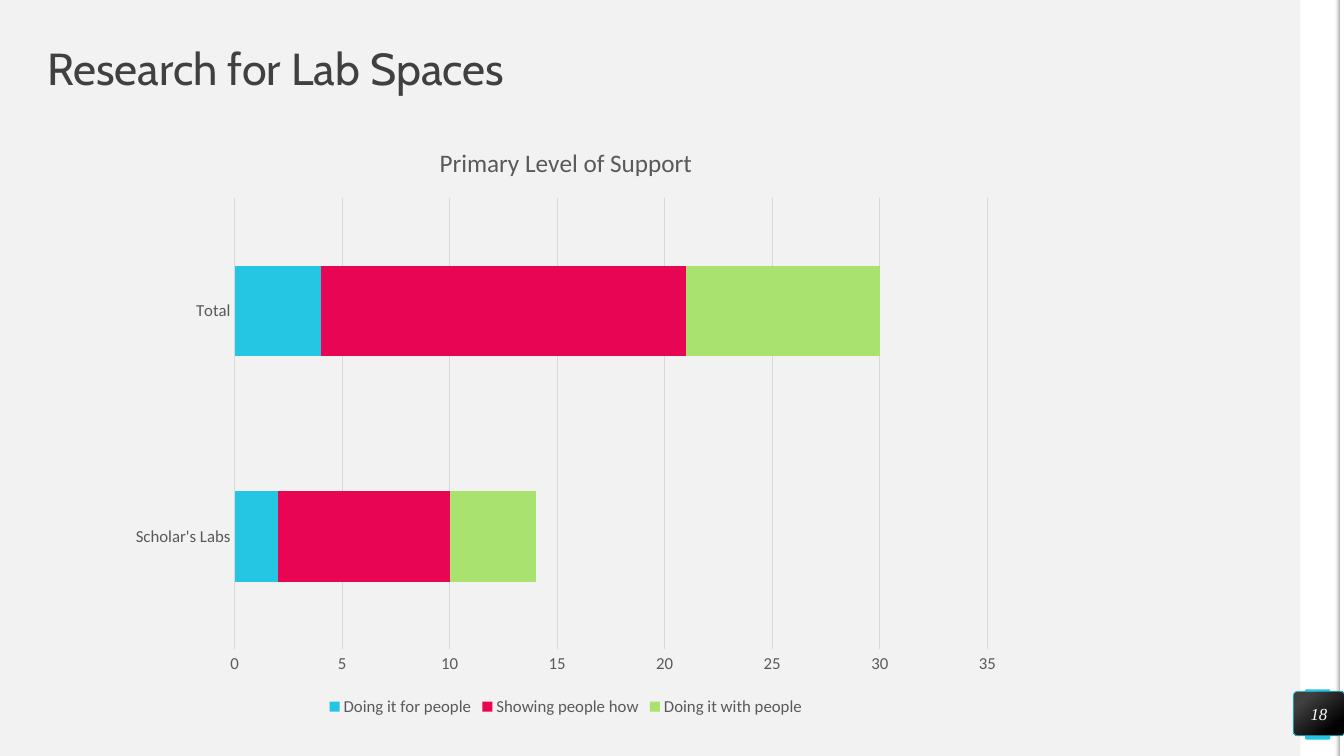
"""Build the slide on research for lab spaces with its stacked bar chart."""
from lxml import etree
from pptx import Presentation
from pptx import util as u
from pptx.chart.data import CategoryChartData
from pptx.dml.color import RGBColor
from pptx.enum import chart as ch, shapes, text
from pptx.oxml.ns import qn

PAPER = RGBColor(0xF2, 0xF2, 0xF2)
WHITE = RGBColor(0xFF, 0xFF, 0xFF)
BLACK = RGBColor(0, 0, 0)
DARK = RGBColor(0x40, 0x40, 0x40)
GREY = RGBColor(0x59, 0x59, 0x59)
SHADE = RGBColor(0xA6, 0xA6, 0xA6)
GRID = RGBColor(0xD9, 0xD9, 0xD9)
CYAN = RGBColor(0x25, 0xC6, 0xE3)
PINK = RGBColor(0xE8, 0x05, 0x54)
GREEN = RGBColor(0xA9, 0xE2, 0x6F)
WIDTH, HEIGHT = 33.87, 19.05


class Deck:
    def __init__(self):
        self.prs = Presentation()
        self.prs.slide_width, self.prs.slide_height = u.Cm(WIDTH), u.Cm(HEIGHT)
        self.s = self.prs.slides.add_slide(self.prs.slide_layouts[5])
        self.s.background.fill.solid()
        self.s.background.fill.fore_color.rgb = PAPER

    def style(self, font, size, color, name="Calibri", italic=False):
        font.size, font.name = u.Pt(size), name
        font.bold, font.italic = False, italic
        font.color.rgb = color

    def label(self, sp, words, align, size, color, name, italic=False):
        tf = sp.text_frame
        tf.word_wrap = True
        tf.auto_size = text.MSO_AUTO_SIZE.NONE
        tf.vertical_anchor = text.MSO_ANCHOR.MIDDLE
        tf.margin_left = tf.margin_right = tf.margin_top = tf.margin_bottom = 0
        p = tf.paragraphs[0]
        p.alignment = align
        r = p.add_run()
        r.text = words
        self.style(r.font, size, color, name, italic)
        return p

    def title(self, words, x, y, w, h):
        sp = self.s.shapes.title
        sp.left, sp.top, sp.width, sp.height = map(u.Cm, (x, y, w, h))
        p = self.label(sp, words, text.PP_ALIGN.LEFT, 32, DARK, "Cabin")
        p.line_spacing = 0.9

    def box(self, x, y, w, h, fill=None, radius=None):
        kind = shapes.MSO_SHAPE.RECTANGLE if radius is None else shapes.MSO_SHAPE.ROUNDED_RECTANGLE
        sp = self.s.shapes.add_shape(kind, *map(u.Cm, (x, y, w, h)))
        sp.shadow.inherit = False
        sp.line.fill.background()
        if radius is not None:
            sp.adjustments[0] = radius
        if fill is not None:
            sp.fill.solid()
            sp.fill.fore_color.rgb = fill
        return sp

    def gradient(self, sp, angle, *stops):
        sp.fill.gradient()
        sp.fill.gradient_angle = angle
        for stop, (position, color) in zip(sp.fill.gradient_stops, stops):
            stop.position, stop.color.rgb = position, color

    def fade_in(self, sp):
        first = next(sp.element.spPr.iter(qn("a:srgbClr")))
        etree.SubElement(first, qn("a:alpha")).set("val", "0")

    def badge(self, words, x, y, w, h):
        sp = self.box(x, y, w, h, radius=0.1)
        self.gradient(sp, 310, (0.2, DARK), (0.82, BLACK))
        sp.line.color.rgb, sp.line.width = CYAN, u.Pt(0.5)
        self.label(sp, words, text.PP_ALIGN.CENTER, 12, WHITE, "Times New Roman", True)

    def axis(self, axis):
        axis.major_tick_mark = axis.minor_tick_mark = ch.XL_TICK_MARK.NONE
        self.style(axis.tick_labels.font, 12, GREY)

    def rule(self, line):
        line.color.rgb, line.width = GRID, u.Pt(0.75)

    def bars(self, heading, cats, series, x, y, w, h):
        data = CategoryChartData()
        data.categories = cats
        for name, values, _ in series:
            data.add_series(name, values)
        chart = self.s.shapes.add_chart(
            ch.XL_CHART_TYPE.BAR_STACKED, *map(u.Cm, (x, y, w, h)), data).chart
        self.style(chart.font, 10, BLACK)
        chart.has_title = True
        r = chart.chart_title.text_frame.paragraphs[0].add_run()
        r.text = heading
        self.style(r.font, 18, GREY)
        chart.chart_title.include_in_layout = False
        chart.has_legend = True
        chart.legend.position = ch.XL_LEGEND_POSITION.BOTTOM
        chart.legend.include_in_layout = False
        self.style(chart.legend.font, 12, GREY)
        self.axis(chart.category_axis)
        self.rule(chart.category_axis.format.line)
        self.axis(chart.value_axis)
        chart.value_axis.format.line.fill.background()
        self.rule(chart.value_axis.major_gridlines.format.line)
        plot = chart.plots[0]
        plot.gap_width, plot.overlap, plot.vary_by_categories = 150, 100, False
        for bar, (_, _, color) in zip(plot.series, series):
            bar.format.fill.solid()
            bar.format.fill.fore_color.rgb = color


def main():
    deck = Deck()
    deck.box(32.77, 0, 0.99, HEIGHT, WHITE)
    deck.box(32.89, 17.37, 0.64, 1.27, CYAN, 0.07)
    deck.box(33.74, 0, 0.13, HEIGHT, WHITE)
    edge = deck.box(33.62, 0, 0.13, HEIGHT)
    deck.gradient(edge, 0, (0, PAPER), (1, SHADE))
    deck.fade_in(edge)
    deck.title("Research for Lab Spaces", 1.19, 1.19, 31.47, 1.19)
    deck.badge("18", 32.59, 17.42, 1.3, 1.12)
    deck.bars("Primary Level of Support", ["Scholar's Labs", "Total"], [
        ("Doing it for people", (2, 4), CYAN),
        ("Showing people how", (8, 17), PINK),
        ("Doing it with people", (4, 9), GREEN),
    ], 2.97, 3.1, 22.58, 15.06)
    deck.prs.save("out.pptx")


if __name__ == "__main__":
    main()
